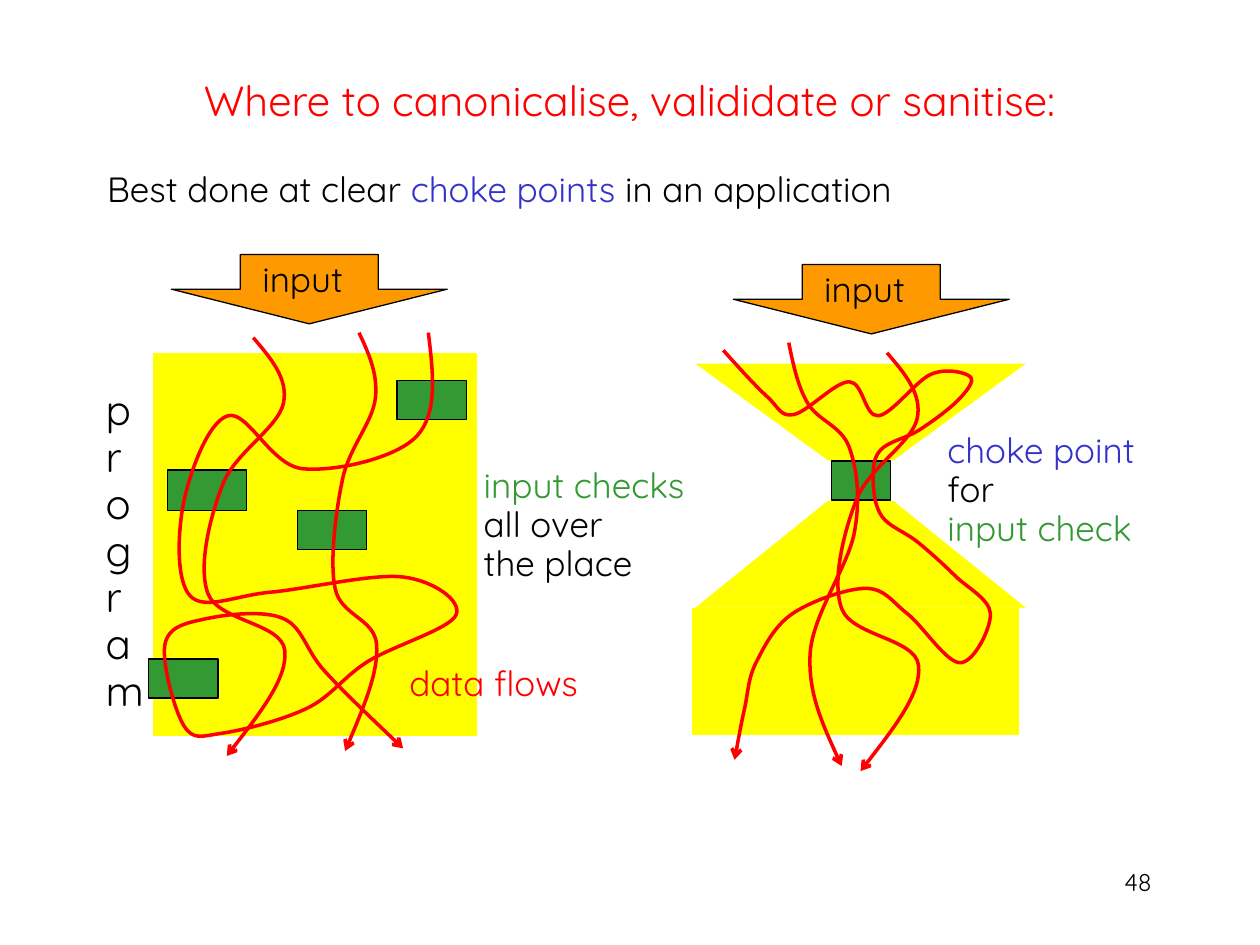
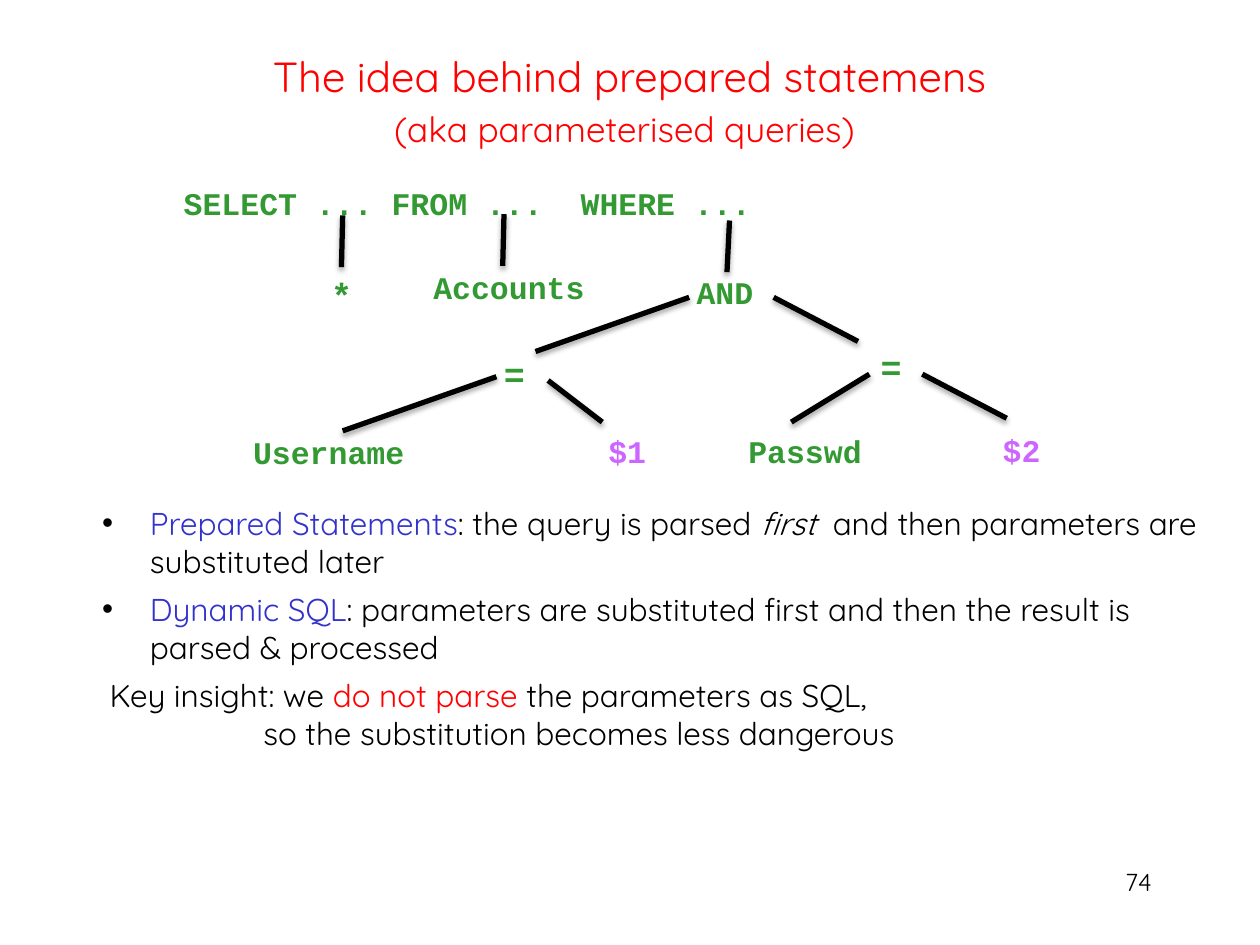
from lxml import etree
from pptx import Presentation
from pptx.dml.color import RGBColor
from pptx.enum.shapes import MSO_CONNECTOR, MSO_SHAPE
from pptx.enum.text import MSO_ANCHOR, MSO_AUTO_SIZE, PP_ALIGN
from pptx.oxml import parse_xml
from pptx.oxml.ns import nsdecls, qn
from pptx.util import Inches, Pt

# Slide grid: 10 columns by 7.5 rows of square cells
COLS, ROWS = 10, 7.5
CELL = Inches(1)

RED = RGBColor(0xFF, 0x00, 0x00)
BLUE = RGBColor(0x33, 0x33, 0xCC)
GREEN = RGBColor(0x33, 0x99, 0x33)
PURPLE = RGBColor(0xCC, 0x66, 0xFF)
YELLOW = RGBColor(0xFF, 0xFF, 0x00)
ORANGE = RGBColor(0xFF, 0x99, 0x00)
BLACK = RGBColor(0x00, 0x00, 0x00)
WHITE = RGBColor(0xFF, 0xFF, 0xFF)

SANS, MONO = "Quicksand", "Courier New"
LEFT, CENTER, RIGHT = PP_ALIGN.LEFT, PP_ALIGN.CENTER, PP_ALIGN.RIGHT
MIDDLE, TOP = MSO_ANCHOR.MIDDLE, MSO_ANCHOR.TOP
RECT, ARROW, TRAPEZOID = MSO_SHAPE.RECTANGLE, MSO_SHAPE.DOWN_ARROW, MSO_SHAPE.TRAPEZOID
STRAIGHT = MSO_CONNECTOR.STRAIGHT
NO_FIT = MSO_AUTO_SIZE.NONE

TITLE_BOX = (0.75, 0.3, 8.49, 0.92)
NUMBER_BOX = (7.17, 6.83, 2.07, 0.49)
TIGHT, LOOSE = 0.93, 1.16
INPUT_SIZE = (2.19, 0.55)
CHECK_SIZE = (0.55, 0.31)

# Points that the data flows run through
SIDE_FLOW = [(2.01, 2.68), (2.25, 3.2), (1.77, 3.84), (1.65, 4.71), (2.26, 5.16), (1.8, 6)]
MIDDLE_FLOW = [(2.85, 2.64), (2.98, 3.16), (2.72, 3.8), (2.66, 4.67), (2.99, 5.12), (2.74, 5.96)]
WINDING_FLOW = [
    (3.4, 2.64), (3.31, 3.46), (2.4, 3.72), (1.81, 3.3), (1.46, 3.98), (1.51, 4.73),
    (2.15, 4.7), (3.2, 4.58), (3.62, 4.88), (2.92, 5.25), (2.44, 5.62), (1.76, 5.82),
    (1.46, 5.76), (1.31, 5.11), (1.64, 4.91), (2.25, 4.91), (2.58, 5.33), (3.2, 5.94)]
CHOKED_FLOW = [(6.26, 2.72), (6.41, 3.2), (6.74, 3.55), (6.78, 4.23), (6.43, 5.19), (6.68, 6.08)]
LOOPING_FLOW = [
    (5.74, 2.78), (6.09, 3.15), (6.3, 3.29), (6.74, 3.03), (6.97, 3.3), (7.39, 2.97),
    (7.7, 2.99), (7.61, 3.17), (7.3, 3.41), (6.99, 3.57), (6.93, 3.81), (7, 4.1),
    (7.28, 4.3), (7.58, 4.57), (7.86, 4.87), (7.62, 5.26), (7.2, 4.87), (6.87, 4.67),
    (6.29, 4.87), (6, 5.26), (5.91, 5.62), (5.83, 6.03)]


def grid(*cells):
    return [round(c * CELL) for c in cells]


def add_runs(p, runs, size, font=SANS, bold=None):
    """Runs are (text, colour) or (text, colour, italic)."""
    for text, color, *italic in runs:
        r = p.add_run()
        r.text = text
        r.font.name, r.font.size, r.font.bold = font, Pt(size), bold
        r.font.color.rgb = color
        if italic:
            r.font.italic = italic[0]


def next_paragraph(tf, first):
    return tf.paragraphs[0] if first else tf.add_paragraph()


def place(sp, box, anchor):
    sp.left, sp.top, sp.width, sp.height = grid(*box)
    sp.text_frame.auto_size = NO_FIT
    sp.text_frame.vertical_anchor = anchor


def set_bullet(p, margin, hang=0, bulleted=False):
    pPr = p._p.get_or_add_pPr()
    pPr.set("marL", str(Inches(margin)))
    pPr.set("indent", str(-Inches(hang)))
    if bulleted:
        color = etree.SubElement(pPr, qn("a:buClr"))
        etree.SubElement(color, qn("a:srgbClr"), val=str(BLACK))
        etree.SubElement(pPr, qn("a:buChar"), char="•")
    else:
        etree.SubElement(pPr, qn("a:buNone"))


def add_label(s, left, top, width, height, lines, size=20, font=SANS, bold=None,
              spacing=TIGHT, align=LEFT, wrap=False):
    tf = s.shapes.add_textbox(*grid(left, top, width, height)).text_frame
    tf.word_wrap = wrap
    for i, line in enumerate(lines):
        p = next_paragraph(tf, i == 0)
        p.alignment, p.line_spacing = align, spacing
        add_runs(p, [line], size, font, bold)


def add_block(s, kind, box, fill, line=BLACK):
    sp = s.shapes.add_shape(kind, *grid(*box))
    sp.shadow.inherit = False
    sp.fill.solid()
    sp.fill.fore_color.rgb = fill
    sp.line.color.rgb = line
    sp.line.width = Pt(0.75)
    return sp


def add_input(s, left, top):
    sp = add_block(s, ARROW, (left, top, *INPUT_SIZE), ORANGE)
    sp.text_frame.vertical_anchor = MIDDLE
    p = sp.text_frame.paragraphs[0]
    p.alignment, p.line_spacing = LEFT, TIGHT
    add_runs(p, [(" input", BLACK)], 20)


def curve_controls(points):
    """Bezier control pairs of a smooth curve through the points."""
    def handle(i):
        (x0, y0), (x1, y1) = points[i - 1], points[i + 1]
        return (x1 - x0) / 6, (y1 - y0) / 6

    def halfway(a, b):
        return (a[0] + b[0]) / 2, (a[1] + b[1]) / 2

    last = len(points) - 2
    for i in range(last + 1):
        start, end = points[i], points[i + 1]
        if i > 0:
            dx, dy = handle(i)
            c1 = start[0] + dx, start[1] + dy
        if i < last:
            dx, dy = handle(i + 1)
            c2 = end[0] - dx, end[1] - dy
        if i == 0:
            c1 = halfway(start, c2)
        if i == last:
            c2 = halfway(c1, end)
        yield c1, c2


def add_flow(s, knots, dx=0, dy=0):
    points = [grid(x + dx, y + dy) for x, y in knots]
    builder = s.shapes.build_freeform(*points[0])
    builder.add_line_segments(points[1:], close=False)
    sp = builder.convert_to_shape()
    sp.shadow.inherit = False
    sp.fill.background()
    sp.line.color.rgb = RED
    sp.line.width = Pt(2)
    etree.SubElement(sp.line._get_or_add_ln(), qn("a:tailEnd"), type="arrow")
    # Bend the straight segments into curves
    segments = list(sp._element.iter(qn("a:lnTo")))
    for segment, controls in zip(segments, curve_controls(points)):
        curve = etree.Element(qn("a:cubicBezTo"))
        for x, y in controls:
            etree.SubElement(curve, qn("a:pt"), x=str(round(x - sp.left)), y=str(round(y - sp.top)))
        curve.append(segment[0])
        segment.getparent().replace(segment, curve)


def add_branch(s, *ends):
    line = s.shapes.add_connector(STRAIGHT, *grid(*ends))
    line.line.color.rgb = BLACK
    line.line.width = Pt(3)
    line._element.spPr.append(parse_xml(
        f'<a:effectLst {nsdecls("a")}><a:outerShdw blurRad="{Pt(3.1)}" dist="{Pt(1.8)}" '
        f'dir="5400000" rotWithShape="0"><a:srgbClr val="{BLACK}"><a:alpha val="35000"/>'
        '</a:srgbClr></a:outerShdw></a:effectLst>'))


def add_slide(prs, title, number, subtitle=None):
    s = prs.slides.add_slide(prs.slide_layouts[1])
    place(s.shapes.title, TITLE_BOX, MIDDLE)
    p = s.shapes.title.text_frame.paragraphs[0]
    p.alignment, p.line_spacing = CENTER, LOOSE
    add_runs(p, [(title, RED)], 24)
    if subtitle:
        p.add_line_break()
        add_runs(p, [(subtitle, RED)], 20)
    add_label(s, *NUMBER_BOX, [(number, BLACK)], size=14, spacing=1, align=RIGHT, wrap=True)
    return s


def fill_body(s, box, paragraphs, size, spacing=1):
    """Paragraphs are (runs, space before, bullet settings)."""
    body = s.placeholders[1]
    place(body, box, TOP)
    for i, (runs, before, bullet) in enumerate(paragraphs):
        p = next_paragraph(body.text_frame, i == 0)
        p.line_spacing, p.space_before = spacing, Pt(before)
        set_bullet(p, *bullet)
        add_runs(p, runs, size)


def choke_point_slide(prs):
    s = add_slide(prs, "Where to canonicalise, valididate or sanitise:", "48")
    fill_body(s, (0.75, 1.23, 8.49, 5.42), [
        ([("Best done at clear ", BLACK), ("choke points ", BLUE),
          ("in an application", BLACK)], 6, (0,))], 20, LOOSE)

    # Hourglass program with one check
    add_block(s, TRAPEZOID, (5.5, 3.97, 2.66, 0.86), YELLOW, WHITE).adjustments[0] = 1.24
    funnel = add_block(s, TRAPEZOID, (5.5, 2.88, 2.66, 0.78), YELLOW, WHITE)
    funnel.adjustments[0] = 1.37
    funnel.rotation = 180
    add_block(s, RECT, (5.5, 4.83, 2.58, 1), YELLOW, YELLOW)
    add_block(s, RECT, (6.6, 3.66, 0.47, 0.31), GREEN)
    add_input(s, 5.82, 2.1)

    # Plain program with scattered checks
    add_block(s, RECT, (1.21, 2.8, 2.58, 3.05), YELLOW, WHITE)
    add_block(s, RECT, (1.33, 3.73, 0.63, 0.32), GREEN)
    for left, top in [(2.36, 4.05), (1.18, 5.23), (3.15, 3.02)]:
        add_block(s, RECT, (left, top, *CHECK_SIZE), GREEN)
    add_input(s, 1.36, 2.02)

    # Data flows
    for flow in (SIDE_FLOW, MIDDLE_FLOW, WINDING_FLOW, CHOKED_FLOW, LOOPING_FLOW):
        add_flow(s, flow)
    add_flow(s, SIDE_FLOW, 5.03, 0.12)

    # Labels
    add_label(s, 7.42, 3.38, 1.78, 1.04,
              [("choke point", BLUE), ("for", BLACK), ("input check", GREEN)])
    add_label(s, 3.15, 5.23, 1.6, 0.41, [("data flows", RED)])
    add_label(s, 3.74, 3.66, 1.92, 1.04,
              [("input checks", GREEN), ("all over", BLACK), ("the place", BLACK)])
    add_label(s, 0.74, 3.03, 0.5, 2.73, [(c, BLACK) for c in "program"], size=24)


def prepared_statement_slide(prs):
    s = add_slide(prs, "The idea behind prepared statemens", "74", "(aka parameterised queries) ")
    bullet = (0.38, 0.38, True)
    fill_body(s, (0.71, 3.95, 8.94, 2.36), [
        ([("Prepared Statements", BLUE), (": the query is parsed ", BLACK),
          ("first ", BLACK, True), (" and then parameters are substituted later", BLACK, False)],
         6, bullet),
        ([("Dynamic SQL", BLUE),
          (": parameters are substituted first and then the result is parsed & processed", BLACK)],
         6, bullet),
        ([("Key insight: we", BLACK), (" do not parse ", RED),
          ("the parameters as SQL,", BLACK)], 6, (0.06,)),
        ([("so the substitution becomes less dangerous", BLACK)], 0, (1.28,))], 18)

    # Nodes of the query tree
    for text, left, top, width, size, color in [
            ("SELECT ...", 1.36, 1.41, 1.7, 18, GREEN),
            ("FROM ...", 3.01, 1.41, 1.4, 18, GREEN),
            ("WHERE ...", 4.51, 1.41, 1.55, 18, GREEN),
            ("*", 2.53, 2.12, 0.37, 20, GREEN),
            ("Accounts", 3.34, 2.08, 1.41, 18, GREEN),
            ("AND", 5.43, 2.12, 0.65, 18, GREEN),
            ("=", 3.9, 2.75, 0.37, 20, GREEN),
            ("=", 6.89, 2.69, 0.37, 20, GREEN),
            ("Username", 1.91, 3.39, 1.41, 18, GREEN),
            ("$1", 4.73, 3.38, 0.5, 18, PURPLE),
            ("Passwd", 5.84, 3.38, 1.11, 18, GREEN),
            ("$2", 7.86, 3.37, 0.5, 18, PURPLE)]:
        add_label(s, left, top, width, 0.38, [(text, color)], size, MONO, True, spacing=1)

    # Branches of the query tree
    for ends in [(2.72, 1.71, 2.71, 2.12), (4, 1.7, 3.99, 2.11), (5.79, 1.75, 5.77, 2.16),
                 (5.47, 2.36, 4.25, 2.79), (6.14, 2.36, 6.81, 2.71),
                 (3.94, 2.99, 2.72, 3.42), (4.35, 3.02, 4.78, 3.35),
                 (6.9, 2.97, 6.28, 3.35), (7.32, 2.97, 7.99, 3.32)]:
        add_branch(s, *ends)


def main():
    prs = Presentation()
    prs.slide_width, prs.slide_height = grid(COLS, ROWS)
    choke_point_slide(prs)
    prepared_statement_slide(prs)
    prs.save("out.pptx")


if __name__ == "__main__":
    main()
